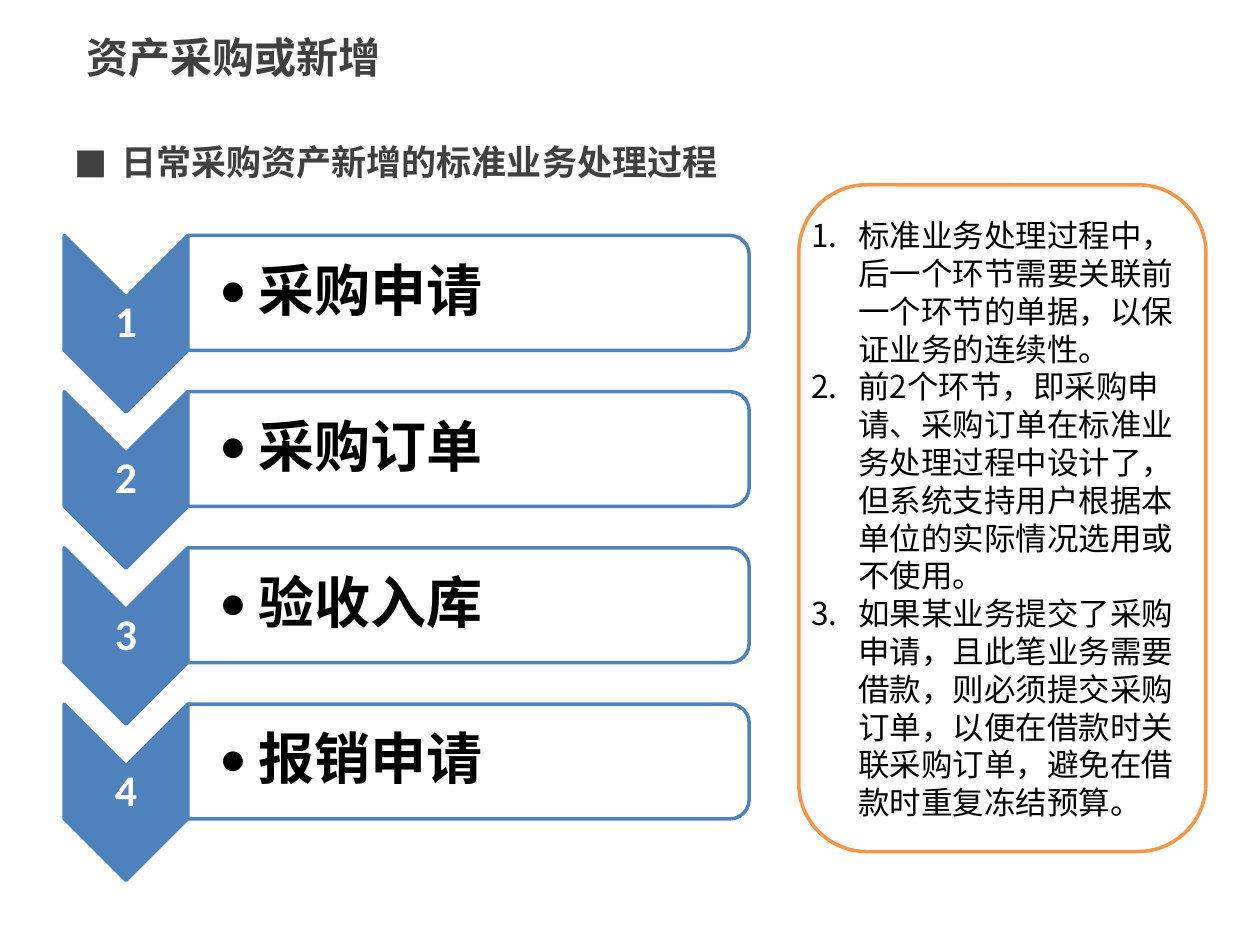
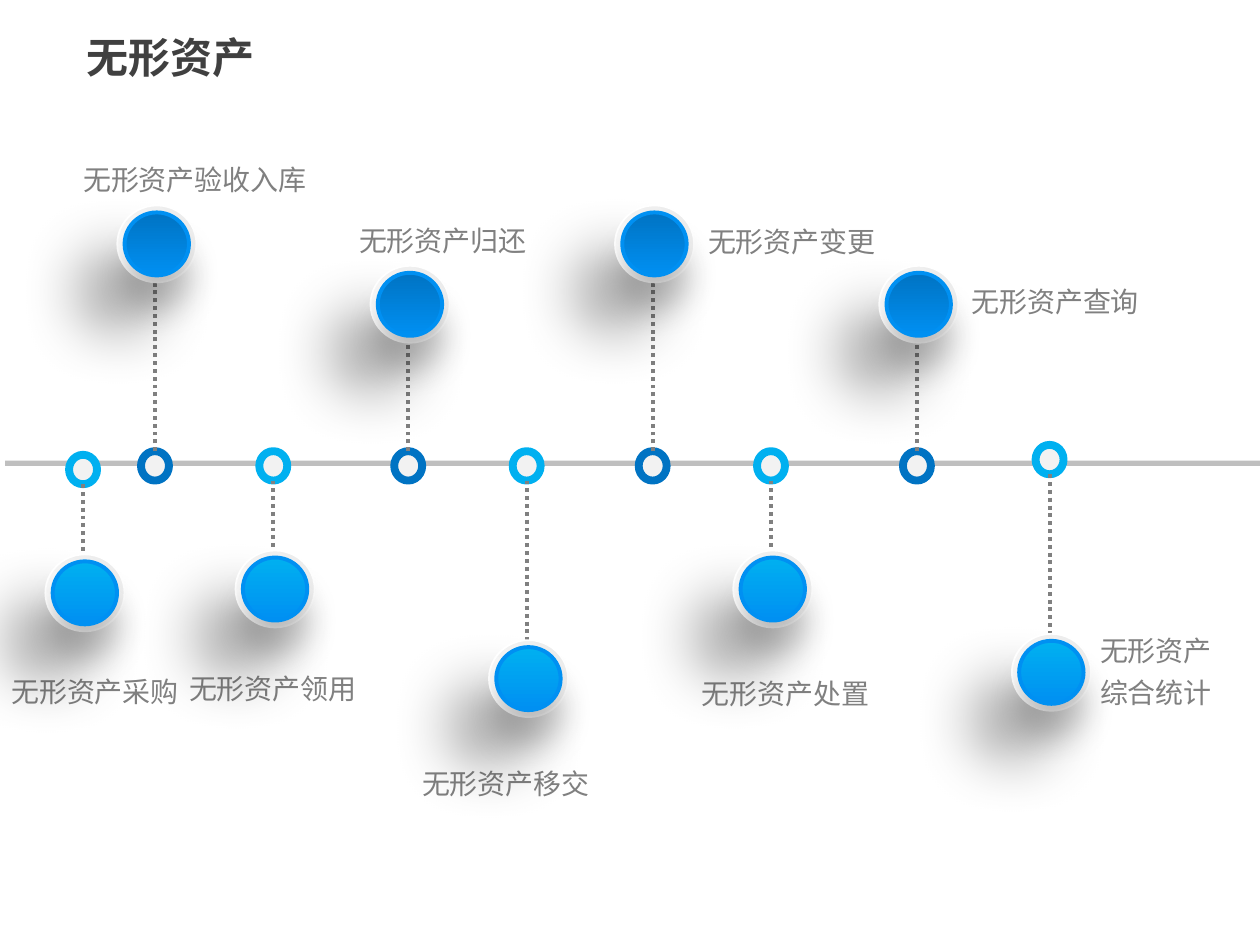
"""Asset purchase steps and intangible asset timeline."""
from lxml.etree import SubElement
from pptx import Presentation
from pptx.dml.color import RGBColor as RGB
from pptx.enum.dml import MSO_LINE
from pptx.enum.shapes import MSO_CONNECTOR as CONN, MSO_SHAPE as SHAPE
from pptx.enum.text import MSO_ANCHOR as ANCHOR, PP_ALIGN as ALIGN
from pptx.oxml.ns import qn
from pptx.util import Pt

COLORS = {
    "title": "404040", "text": "000000", "white": "FFFFFF", "step": "4F81BD",
    "note": "F79646", "label": "808080", "axis": "BFBFBF", "hole": "F2F2F2",
    "dark": "0073C3", "light": "00B0F0", "glow": "0090F2",
    "rim_from": "EBEBEB", "rim_to": "FEFEFE", "shade": "262626",
}
CJK = "Noto Sans CJK SC"
LATIN = "Calibri"

STEPS = ["采购申请", "采购订单", "验收入库", "报销申请"]
NOTES = [
    "标准业务处理过程中，后一个环节需要关联前一个环节的单据，以保证业务的连续性。",
    "前2个环节，即采购申请、采购订单在标准业务处理过程中设计了，但系统支持用户根据本单位的实际情况选用或不使用。",
    "如果某业务提交了采购申请，且此笔业务需要借款，则必须提交采购订单，以便在借款时关联采购订单，避免在借款时重复冻结预算。",
]
MARKER_TOP = 257.8
MILESTONES = [
    (["无形资产验收入库"], 88.6, MARKER_TOP, 117.4, (47.5, 88.2, 134)),
    (["无形资产领用"], 156.2, MARKER_TOP, 314.6, (108, 379, 112)),
    (["无形资产归还"], 233.3, MARKER_TOP, 151.9, (205.2, 122.7, 120)),
    (["无形资产移交"], 301, MARKER_TOP, 365.8, (241.2, 433, 124)),
    (["无形资产变更"], 373, MARKER_TOP, 117.4, (404.6, 123.4, 173)),
    (["无形资产处置"], 440.6, MARKER_TOP, 314.6, (401, 382, 118)),
    (["无形资产查询"], 524, MARKER_TOP, 151.9, (555.1, 158, 143)),
    (["无形资产", "综合统计"], 599.8, 254.2, 362.2, (628.6, 357.4, 87)),
    (["无形资产采购"], 47.5, 259.9, 316.8, (6.5, 380.4, 105)),
]


def color(name):
    """Return the named colour."""
    return RGB.from_string(COLORS[name])


def set_bullet(p, bullet, indent):
    """Give a paragraph a hanging bullet, or a number if bullet is '1.'."""
    pPr = p._p.get_or_add_pPr()
    pPr.set("marL", str(Pt(indent)))
    pPr.set("indent", str(-Pt(indent)))
    if bullet == "1.":
        SubElement(pPr, qn("a:buFont"), typeface=CJK)
        SubElement(pPr, qn("a:buAutoNum"), type="arabicPeriod")
    else:
        SubElement(pPr, qn("a:buFont"), typeface=LATIN)
        SubElement(pPr, qn("a:buChar"), char=bullet)


def add_text(slide, box, lines, size=18, fill="text", font=CJK, bold=False, align=ALIGN.LEFT,
             anchor=ANCHOR.TOP, insets=(7.2, 3.6, 7.2, 3.6), spacing=None, bullet=None, indent=0):
    """Add a wrapped text box with one paragraph per line."""
    sp = slide.shapes.add_textbox(*map(Pt, box))
    tf = sp.text_frame
    tf.word_wrap = True
    tf.vertical_anchor = anchor
    tf.margin_left, tf.margin_top, tf.margin_right, tf.margin_bottom = map(Pt, insets)
    for i, line in enumerate(lines):
        p = tf.add_paragraph() if i else tf.paragraphs[0]
        if bullet:
            set_bullet(p, bullet, indent)
        p.alignment = align
        p.line_spacing = spacing
        r = p.add_run()
        r.text = line
        r.font.size, r.font.bold, r.font.name = Pt(size), bold, font
        r.font.color.rgb = color(fill)
        SubElement(r.font._element, qn("a:ea"), typeface=CJK)
    return sp


def add_shape(slide, kind, box, fill, line=None, width=0, turned=False, gradient=None):
    """Add a preset shape that covers the box, turned by a quarter if asked."""
    x, y, w, h = box
    if turned:
        x, y, w, h = x + (w - h) / 2, y + (h - w) / 2, h, w
    sp = slide.shapes.add_shape(kind, Pt(x), Pt(y), Pt(w), Pt(h))
    sp.rotation = 90 if turned else 0
    sp.shadow.inherit = False
    if gradient:
        end, angle = gradient
        sp.fill.gradient()
        sp.fill.gradient_angle = 360 - angle
        for stop, name in zip(sp.fill.gradient_stops, (fill, end)):
            stop.color.rgb = color(name)
    else:
        sp.fill.solid()
        sp.fill.fore_color.rgb = color(fill)
    if line:
        sp.line.color.rgb = color(line)
        sp.line.width = Pt(width)
    else:
        sp.line.fill.background()
    return sp


def add_shadow(sp, name, alpha, blur, dist, angle):
    """Give a shape an outer shadow."""
    effects = sp.element.spPr.find(qn("a:effectLst"))
    shadow = SubElement(effects, qn("a:outerShdw"), blurRad=str(Pt(blur)), dist=str(Pt(dist)),
                        dir=str(angle * 60000), algn="ctr", rotWithShape="0")
    clr = SubElement(shadow, qn("a:srgbClr"), val=COLORS[name])
    SubElement(clr, qn("a:alpha"), val=str(alpha * 1000))


def add_stem(slide, x, start, end):
    """Add a dotted vertical line with a round tail."""
    c = slide.shapes.add_connector(CONN.STRAIGHT, Pt(x), Pt(start), Pt(x), Pt(end))
    c.line.color.rgb = color("label")
    c.line.width = Pt(2.25)
    c.line.dash_style = MSO_LINE.ROUND_DOT
    spPr = c.element.spPr
    SubElement(spPr.find(qn("a:ln")), qn("a:tailEnd"), type="oval")
    SubElement(spPr, qn("a:effectLst"))


def add_slide(prs, title):
    """Add a blank slide with the shared title."""
    slide = prs.slides.add_slide(prs.slide_layouts[6])
    add_text(slide, (42.5, 8.6, 640, 48.2), [title], size=24, fill="title", bold=True,
             anchor=ANCHOR.MIDDLE)
    return slide


def draw_step(slide, box, number, name):
    """Draw a numbered chevron and the bar beside it."""
    x, y, w, h = box
    arrow_w, bar_h = 70.6, 65.6
    add_shape(slide, SHAPE.CHEVRON, (x, y, arrow_w, h), "step", "step", 2, turned=True)
    add_text(slide, (x, y + 35.2, arrow_w, 30.2), [str(number)], size=25, fill="white",
             font=LATIN, bold=True, align=ALIGN.CENTER, anchor=ANCHOR.MIDDLE,
             insets=(1.4,) * 4, spacing=0.9)
    bar = add_shape(slide, SHAPE.ROUND_2_SAME_RECTANGLE, (x + arrow_w, y, w - arrow_w, bar_h),
                    "white", "step", 2, turned=True)
    clr = bar.element.spPr.find(qn("a:solidFill")).find(qn("a:srgbClr"))
    SubElement(clr, qn("a:alpha"), val="90000")
    add_text(slide, (x + arrow_w, y + 3.2, w - arrow_w - 3.2, 59.2), [name], size=32,
             font=LATIN, bold=True, anchor=ANCHOR.MIDDLE, insets=(18, 1.4, 1.4, 1.4),
             spacing=0.9, bullet="•", indent=22.5)


def draw_notes(slide, box):
    """Draw the rounded panel with its numbered notes."""
    x, y, w, h = box
    add_shape(slide, SHAPE.ROUNDED_RECTANGLE, box, "white", "note", 2)
    add_text(slide, (x, y + 14.4, w - 4.3, h - 24.5), NOTES, spacing=Pt(21.6),
             bullet="1.", indent=27)


def draw_disc(slide, box, shade):
    """Draw a raised disc with a pale rim."""
    x, y, w, h = box
    rim = add_shape(slide, SHAPE.OVAL, box, "rim_from", "white", 1, gradient=("rim_to", 126))
    add_shadow(rim, "text", 38, 36, 35, 130)
    core = add_shape(slide, SHAPE.OVAL, (x + 4.2, y + 4, w - 8.4, h - 8), shade, "glow", 2.25,
                     gradient=("glow", 90))
    add_shadow(core, "shade", 28, 18, 18, 90)


def draw_milestone(slide, lines, x, marker_top, disc_top, label_box):
    """Draw a label, its marker on the axis, and the disc above or below."""
    marker_w, marker_h, disc_w, disc_h = 16, 16.8, 45.2, 44
    above = disc_top < marker_top
    shade = "dark" if above else "light"
    add_text(slide, (*label_box, 24 * len(lines)), lines, size=16, fill="label",
             insets=(0,) * 4, spacing=Pt(24))
    add_shape(slide, SHAPE.OVAL, (x - marker_w / 2, marker_top, marker_w, marker_h),
              "hole", shade, 4.5)
    add_stem(slide, x, marker_top if above else marker_top + marker_h, disc_top + disc_h / 2)
    draw_disc(slide, (x + 1 - disc_w / 2, disc_top, disc_w, disc_h), shade)


def build_purchase(prs):
    """Build the slide of purchase steps."""
    slide = add_slide(prs, "资产采购或新增")
    pitch = 89.25
    for i, name in enumerate(STEPS):
        draw_step(slide, (36.7, 134.6 + i * pitch, 391.4, 100.8), i + 1, name)
    draw_notes(slide, (456.5, 105.6, 232.6, 381))
    add_text(slide, (35.3, 77, 648, 41), ["日常采购资产新增的标准业务处理过程"], size=20,
             fill="title", bold=True, spacing=Pt(24), bullet="■", indent=27)


def build_intangible(prs):
    """Build the timeline slide."""
    slide = add_slide(prs, "无形资产")
    add_shape(slide, SHAPE.RECTANGLE, (3, 263.3, 717, 3), "axis")
    for milestone in MILESTONES:
        draw_milestone(slide, *milestone)


def main():
    """Build and save the presentation."""
    prs = Presentation()
    prs.slide_width, prs.slide_height = Pt(720), Pt(540)
    build_purchase(prs)
    build_intangible(prs)
    prs.save("out.pptx")


if __name__ == "__main__":
    main()
